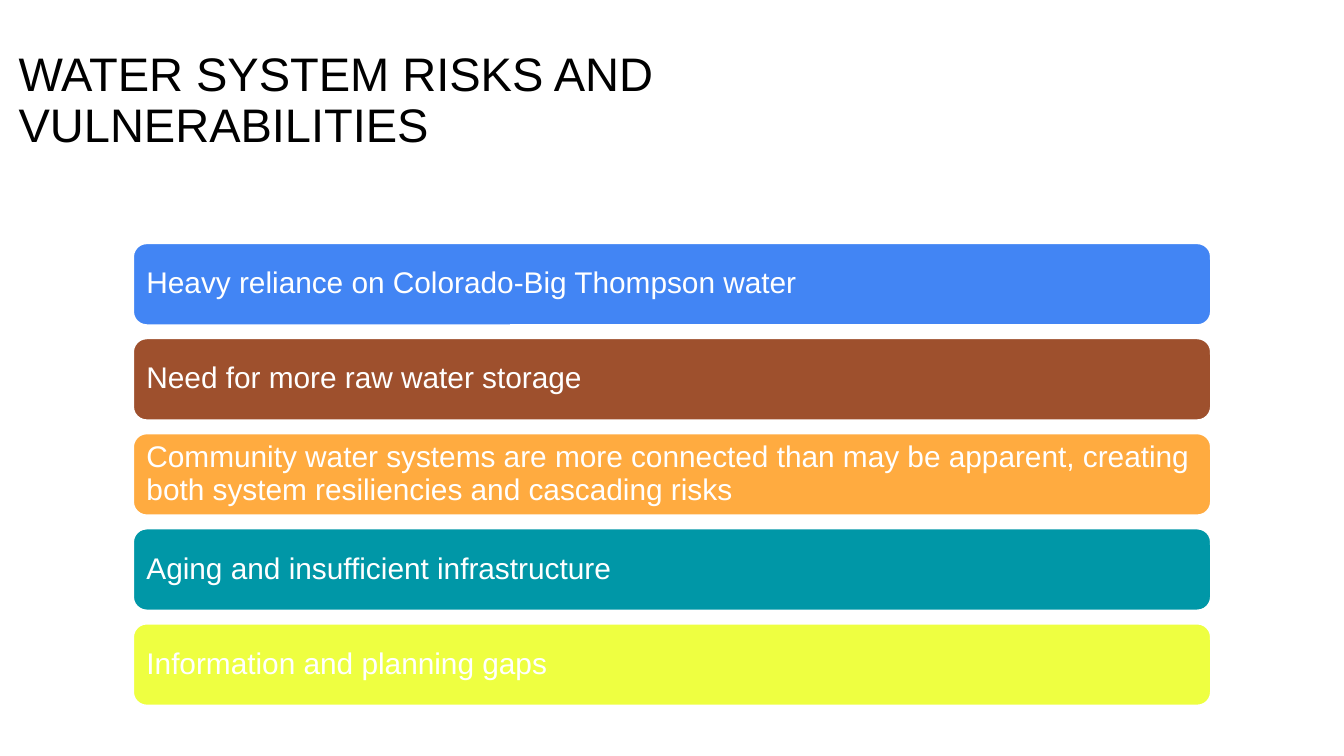
"""Build the slide on water system risks and vulnerabilities."""
from pptx import Presentation, util as u
from pptx.dml.color import RGBColor
from pptx.enum import shapes, text

TITLE = "WATER SYSTEM RISKS AND VULNERABILITIES"
RISKS = [
    ("Heavy reliance on Colorado-Big Thompson water", "4285F4"),
    ("Need for more raw water storage", "9E502D"),
    ("Community water systems are more connected than may be apparent, "
     "creating both system resiliencies and cascading risks", "FFAB40"),
    ("Aging and insufficient infrastructure", "0097A7"),
    ("Information and planning gaps", "EEFF41"),
]
SLIDE_WIDTH = 10
SLIDE_HEIGHT = SLIDE_WIDTH * 9 / 16
BAR_LEFT, BAR_WIDTH, BAR_HEIGHT = 0.99, 8.02, 0.61
FIRST_TOP, LAST_TOP = 1.81, 4.64


def color(value):
    return RGBColor.from_string(value)


def write(shape, words, size, font_color, inset_x, inset_y):
    frame = shape.text_frame
    frame.word_wrap = True
    frame.vertical_anchor = text.MSO_ANCHOR.MIDDLE
    frame.margin_left = frame.margin_right = u.Inches(inset_x)
    frame.margin_top = frame.margin_bottom = u.Inches(inset_y)
    paragraph = frame.paragraphs[0]
    paragraph.text = words
    paragraph.alignment = text.PP_ALIGN.LEFT
    paragraph.line_spacing = 0.9
    paragraph.font.name = "Arial"
    paragraph.font.size = u.Pt(size)
    paragraph.font.color.rgb = color(font_color)


def add_bar(slide, top, words, fill):
    bar = slide.shapes.add_shape(
        shapes.MSO_SHAPE.ROUNDED_RECTANGLE,
        *map(u.Inches, (BAR_LEFT, top, BAR_WIDTH, BAR_HEIGHT)))
    bar.shadow.inherit = False
    bar.fill.solid()
    bar.fill.fore_color.rgb = color(fill)
    bar.line.color.rgb = color("FFFFFF")
    bar.line.width = u.Pt(1)
    write(bar, words, 16, "FFFFFF", 0.07, 0.07)


def main():
    presentation = Presentation()
    presentation.slide_width = u.Inches(SLIDE_WIDTH)
    presentation.slide_height = u.Inches(SLIDE_HEIGHT)
    slide = presentation.slides.add_slide(presentation.slide_layouts[6])
    title = slide.shapes.add_textbox(*map(u.Inches, (0.04, 0.43, 7.93, 0.65)))
    write(title, TITLE, 25.2, "000000", 0.1, 0.05)
    step = (LAST_TOP - FIRST_TOP) / (len(RISKS) - 1)
    for index, (words, fill) in enumerate(RISKS):
        add_bar(slide, FIRST_TOP + index * step, words, fill)
    presentation.save("out.pptx")


if __name__ == "__main__":
    main()
